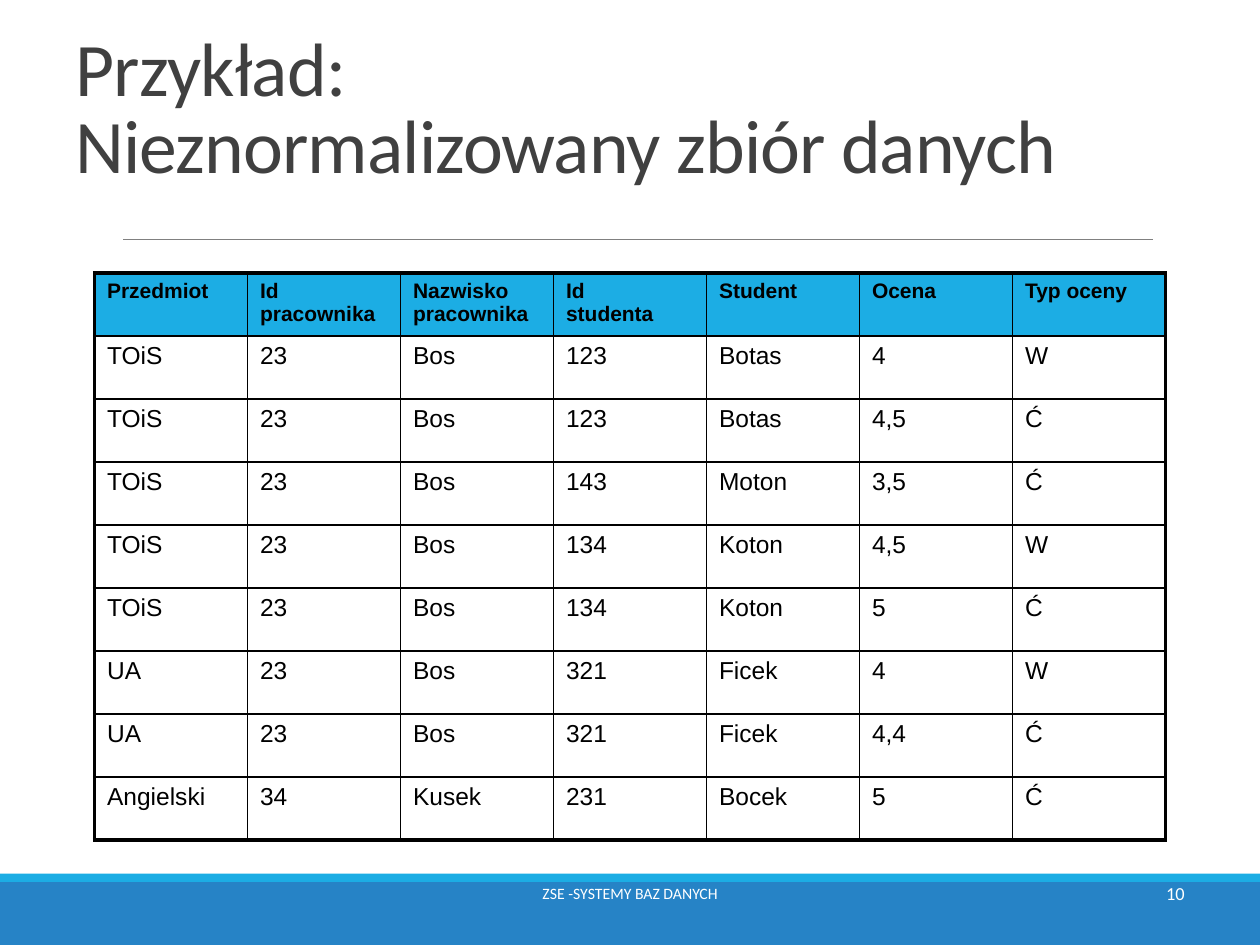
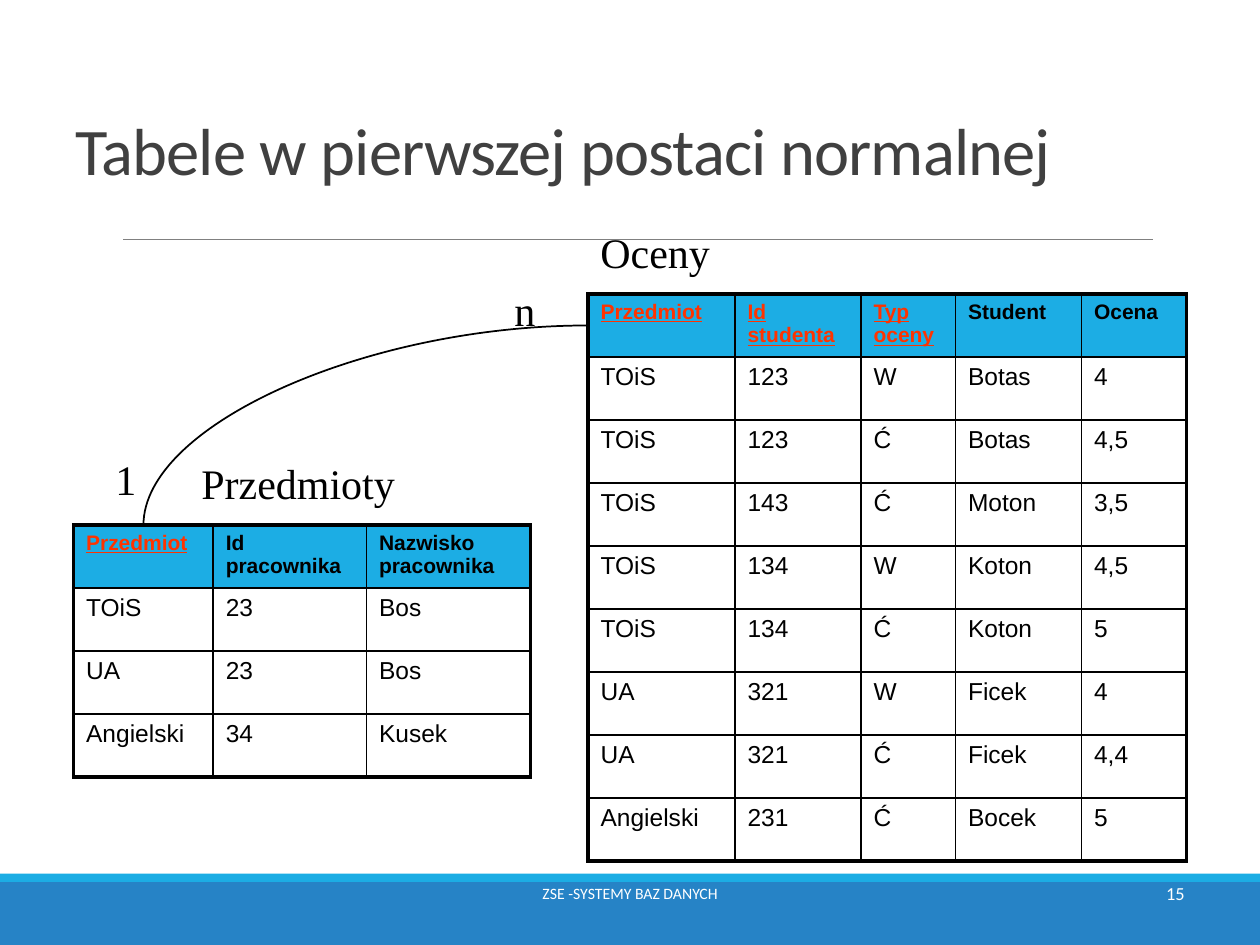
from lxml.etree import SubElement as Sub
from pptx import Presentation
from pptx.dml.color import RGBColor as RGB
from pptx.enum.shapes import MSO_CONNECTOR as Link, MSO_SHAPE as Form
from pptx.enum.text import MSO_ANCHOR as Anchor, MSO_AUTO_SIZE as Auto, PP_ALIGN as Align
from pptx.oxml.ns import qn
from pptx.util import Inches, Pt

# Colours
BLUE = RGB(0x26, 0x83, 0xC6)
SKY = RGB(0x1C, 0xAD, 0xE4)
GREY = RGB(0x80, 0x80, 0x80)
DARK = RGB(0x40, 0x40, 0x40)
BLACK = RGB(0, 0, 0)
WHITE = RGB(255, 255, 255)
RED = RGB(0xFF, 0x33, 0x00)

# Grid: 120 columns by 90 rows
WIDE, HIGH = Inches(10), Inches(7.5)
COLS, ROWS = 120, 90
STEP = 6  # height of a table row
THIN, THICK = Pt(1), Pt(2.25)

# Text formats
TITLE = {"name": "Calibri", "size": Pt(43.2), "color": DARK}
FOOT = {"name": "Calibri", "size": Pt(9), "color": WHITE}
PAGE = FOOT | {"size": Pt(10.5)}
LABEL = {"name": "Times New Roman", "size": Pt(24), "color": BLACK}
CELL = {"name": "Arial", "size": Pt(14), "color": BLACK}
HEAD = CELL | {"size": Pt(12), "bold": True}
KEY = HEAD | {"color": RED, "underline": True}

# Data
NAMES = ["Przedmiot", "Id pracownika", "Nazwisko pracownika", "Id \vstudenta",
         "Student", "Ocena", "Typ oceny"]
MARKS = [
    ["TOiS", "23", "Bos", "123", "Botas", "4", "W"],
    ["TOiS", "23", "Bos", "123", "Botas", "4,5", "Ć"],
    ["TOiS", "23", "Bos", "143", "Moton", "3,5", "Ć"],
    ["TOiS", "23", "Bos", "134", "Koton", "4,5", "W"],
    ["TOiS", "23", "Bos", "134", "Koton", "5", "Ć"],
    ["UA", "23", "Bos", "321", "Ficek", "4", "W"],
    ["UA", "23", "Bos", "321", "Ficek", "4,4", "Ć"],
    ["Angielski", "34", "Kusek", "231", "Bocek", "5", "Ć"],
]


def pick(*cols):
    """Project the data on some columns, without repeated rows."""
    rows = dict.fromkeys(tuple(row[c] for c in cols) for row in MARKS)
    return [[NAMES[c].replace("\v", "") for c in cols], *rows]


class Deck:
    def __init__(self):
        self.prs = Presentation()
        self.prs.slide_width, self.prs.slide_height = WIDE, HIGH
        self.slide = None

    def x(self, cols):
        return int(WIDE * cols / COLS)

    def y(self, rows):
        return int(HIGH * rows / ROWS)

    def box(self, left, top, wide, high):
        return self.x(left), self.y(top), self.x(wide), self.y(high)

    def start(self, title, size):
        self.slide = self.prs.slides.add_slide(self.prs.slide_layouts[6])
        self.band(84, 6, BLUE)
        self.band(83.2, 0.8, SKY)
        self.line(Link.STRAIGHT, (11.75, 22.8), (109.8, 22.8), GREY, Pt(0.5))
        head = self.text(title, (6, 3.6, 108, 15), TITLE | {"size": size},
                         anchor=Anchor.BOTTOM)
        head.line_spacing = 0.85
        for run in head.runs:
            run.font._element.set("spc", "-50")

    def close(self, page):
        self.text(page, (86, 82, 28, 6.2), PAGE, Align.RIGHT, Anchor.MIDDLE)
        self.text("ZSE -SYSTEMY BAZ DANYCH", (41, 82, 38, 6.2), FOOT,
                  Align.CENTER, Anchor.MIDDLE)

    def band(self, top, high, color):
        shape = self.slide.shapes.add_shape(Form.RECTANGLE, *self.box(0, top, COLS, high))
        shape.shadow.inherit = False
        shape.fill.solid()
        shape.fill.fore_color.rgb = color
        shape.line.fill.background()

    def line(self, kind, start, end, color, width):
        link = self.slide.shapes.add_connector(
            kind, self.x(start[0]), self.y(start[1]), self.x(end[0]), self.y(end[1]))
        link.line.color.rgb = color
        link.line.width = width
        Sub(link._element.spPr, qn("a:effectLst"))
        return link

    def curve(self, start, end):
        """Quarter arc that leaves upwards and arrives to the right."""
        midx, midy = (start[0] + end[0]) / 2, (start[1] + end[1]) / 2
        dx, dy = (start[1] - end[1]) / 2, (end[0] - start[0]) / 2
        link = self.line(Link.CURVE, (midx - dx, midy - dy), (midx + dx, midy + dy),
                         BLACK, THIN)
        props = link._element.spPr
        props.find(qn("a:prstGeom")).set("prst", "curvedConnector2")
        props.find(qn("a:xfrm")).set("rot", str(270 * 60000))

    def style(self, para, form):
        for run in para.runs:
            for key, value in form.items():
                if key == "color":
                    run.font.color.rgb = value
                else:
                    setattr(run.font, key, value)

    def text(self, words, area, form, align=Align.LEFT, anchor=Anchor.TOP, wrap=True):
        frame = self.slide.shapes.add_textbox(*self.box(*area)).text_frame
        frame.auto_size = Auto.NONE if wrap else Auto.SHAPE_TO_FIT_TEXT
        frame.word_wrap = wrap
        frame.vertical_anchor = anchor
        para = frame.paragraphs[0]
        para.text, para.alignment = words, align
        self.style(para, form)
        return para

    def label(self, words, left, top, wide):
        self.text(words, (left, top, wide, 6), LABEL, wrap=False)

    def edge(self, cell, sides):
        for side, thick in sides.items():
            line = Sub(cell._tc.get_or_add_tcPr(), qn("a:ln" + side),
                       w=str(THICK if thick else THIN))
            fill = Sub(line, qn("a:solidFill"))
            Sub(fill, qn("a:srgbClr"), val=str(BLACK))

    def table(self, left, top, widths, rows, keys=0):
        """Draw a grid; the first `keys` headings are key fields."""
        last, end = len(rows) - 1, len(widths) - 1
        area = self.box(left, top, sum(widths), STEP * len(rows))
        grid = self.slide.shapes.add_table(len(rows), len(widths), *area).table
        grid.first_row = grid.horz_banding = False
        for col, wide in zip(grid.columns, widths):
            col.width = self.x(wide)
        for r, row in enumerate(rows):
            grid.rows[r].height = self.y(STEP)
            for c, words in enumerate(row):
                cell = grid.cell(r, c)
                self.edge(cell, {"L": c == 0, "R": c == end, "T": r == 0, "B": r == last})
                para = cell.text_frame.paragraphs[0]
                para.text = words
                if r:
                    cell.fill.background()
                    self.style(para, CELL)
                else:
                    cell.fill.solid()
                    cell.fill.fore_color.rgb = SKY
                    self.style(para, KEY if c < keys else HEAD)


def main():
    deck = Deck()

    # One flat table
    deck.start("Przykład: \vNieznormalizowany zbiór danych", Pt(43.2))
    deck.table(9, 26, [102 / len(NAMES)] * len(NAMES), [NAMES, *MARKS])
    deck.close("10")

    # Two tables, one to many
    deck.start("Tabele w pierwszej postaci normalnej", Pt(38))
    deck.table(56, 28, [14, 12, 9, 12, 10], pick(0, 3, 6, 4, 5), keys=3)
    deck.label("Oceny", 56, 21, 12.8)
    deck.table(7, 50, [13.3, 14.6, 15.6], pick(0, 1, 2), keys=1)
    deck.label("Przedmioty", 18, 43, 20.9)
    deck.curve((13.67, 50), (56, 31))
    deck.label("1", 9.8, 42.6, 4.4)
    deck.label("n", 47.8, 26.5, 4.4)
    deck.close("15")

    deck.prs.save("out.pptx")


if __name__ == "__main__":
    main()
